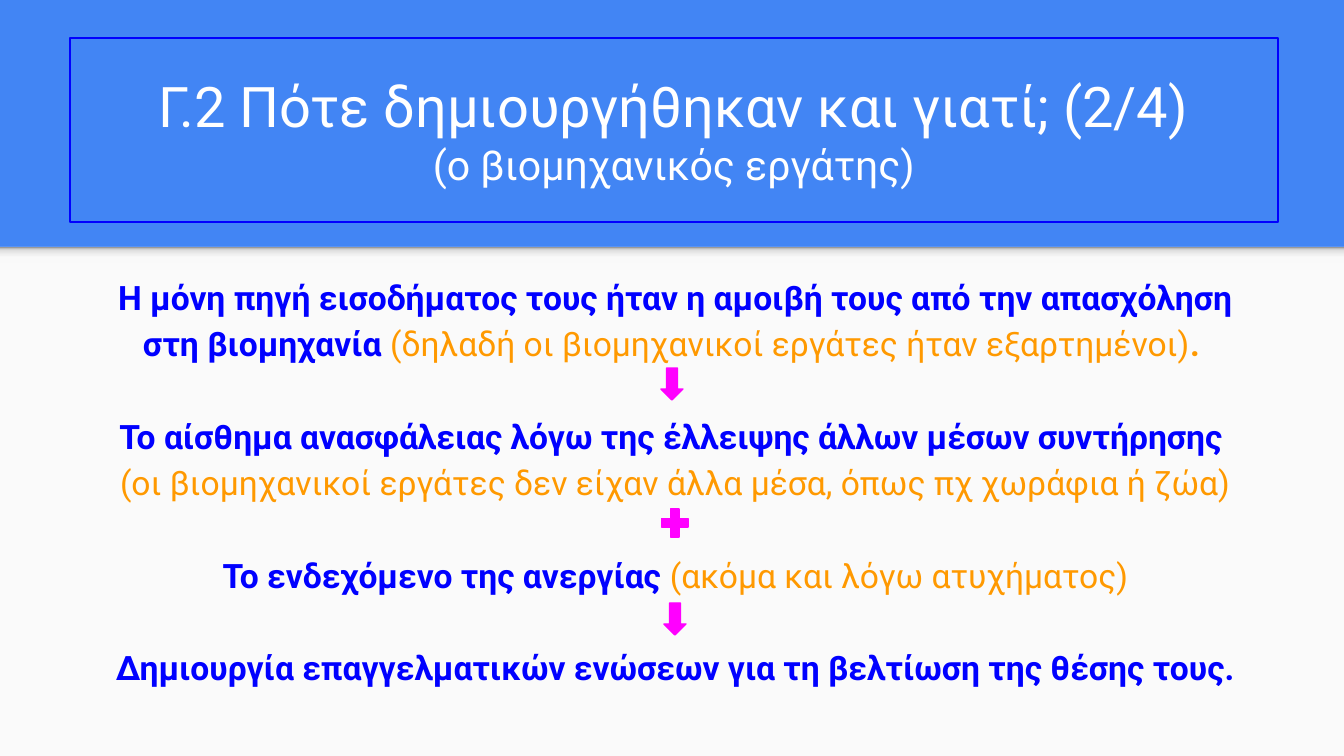
from lxml import etree
from pptx import Presentation
from pptx.dml.color import RGBColor
from pptx.enum.shapes import MSO_SHAPE as SHAPE
from pptx.enum.text import MSO_ANCHOR as ANCHOR, PP_ALIGN as ALIGN
from pptx.oxml.ns import qn
from pptx.util import Emu, Inches, Pt

COLORS = {"header": "4285F4", "panel": "FAFAFA", "title": "FFFFFF",
          "key": "0000FF", "note": "FF9900", "symbol": "FF00FF"}
FONT = "Roboto"
EMU_PER_PX = 914400 / 134.4
WIDTH, HEIGHT, HEADER_HEIGHT = 1344, 756, 247

TITLE_LINES = [("Γ.2 Πότε δημιουργήθηκαν και γιατί; (2/4)", 30),
               ("(ο βιομηχανικός εργάτης)", 22)]
# Each step holds paragraphs, each paragraph holds (text, colour, bold) runs.
STEPS = [
    [[("Η μόνη πηγή εισοδήματος τους ήταν η αμοιβή τους από την απασχόληση στη βιομηχανία ",
       "key", True),
      ("(δηλαδή οι βιομηχανικοί εργάτες ήταν εξαρτημένοι)", "note", False),
      (". ", "note", True)]],
    [[("Το αίσθημα ανασφάλειας λόγω της έλλειψης άλλων μέσων συντήρησης ", "key", True)],
     [("(οι βιομηχανικοί εργάτες δεν είχαν άλλα μέσα, όπως πχ χωράφια ή ζώα)",
       "note", False)]],
    [[("Το ενδεχόμενο της ανεργίας ", "key", True),
      ("(ακόμα και λόγω ατυχήματος)", "note", False)]],
    [[("Δημιουργία επαγγελματικών ενώσεων για τη βελτίωση της θέσης τους.", "key", True)]],
]
SYMBOLS = [(SHAPE.DOWN_ARROW, (661, 368, 22, 32), 0.5),
           (SHAPE.MATH_PLUS, (657, 504, 36, 38), 0.235),
           (SHAPE.DOWN_ARROW, (664, 603, 22, 32), 0.5)]
SHADE_STOPS = [(0, "F9F9F9"), (36, "F9F9F9"), (80, "DEDEDE"), (100, "999999")]


def px(length):
    return Emu(round(length * EMU_PER_PX))


def rgb(name):
    return RGBColor.from_string(COLORS[name])


def add_plain_shape(kind, box):
    """Add a preset shape without shadow or outline."""
    shape = slide.shapes.add_shape(kind, *map(px, box))
    shape.shadow.inherit = False
    shape.line.fill.background()
    return shape


def add_text_frame(box):
    textbox = slide.shapes.add_textbox(*map(px, box))
    frame = textbox.text_frame
    frame.word_wrap = True
    frame.margin_left = frame.margin_right = Inches(0.1)
    frame.margin_top = frame.margin_bottom = Inches(0.1)
    return textbox, frame


def add_paragraph(frame, index, size):
    """Return the first paragraph for index 0, a new one otherwise."""
    paragraph = frame.add_paragraph() if index else frame.paragraphs[0]
    paragraph.alignment = ALIGN.CENTER
    paragraph.font.name = FONT
    paragraph.font.size = Pt(size)
    return paragraph


def set_gradient(shape, stops):
    """Fill from bottom to top with (percent, hex) stops."""
    shape.fill.gradient()
    shape.fill.gradient_angle = 90
    stop_list = shape.element.spPr.find(".//" + qn("a:gsLst"))
    for old_stop in list(stop_list):
        stop_list.remove(old_stop)
    for percent, color in stops:
        stop = etree.SubElement(stop_list, qn("a:gs"), pos=str(percent * 1000))
        etree.SubElement(stop, qn("a:srgbClr"), val=color)


deck = Presentation()
deck.slide_width, deck.slide_height = px(WIDTH), px(HEIGHT)
slide = deck.slides.add_slide(deck.slide_layouts[6])
slide.background.fill.solid()
slide.background.fill.fore_color.rgb = rgb("header")

panel = add_plain_shape(SHAPE.RECTANGLE, (0, HEADER_HEIGHT, WIDTH, HEIGHT - HEADER_HEIGHT))
panel.fill.solid()
panel.fill.fore_color.rgb = rgb("panel")
header_shade = add_plain_shape(SHAPE.RECTANGLE, (0, HEADER_HEIGHT, WIDTH, 16))
set_gradient(header_shade, SHADE_STOPS)

title, title_frame = add_text_frame((70, 38, 1208, 184))
title.line.color.rgb = rgb("key")
title.line.width = Pt(0.75)
title_frame.vertical_anchor = ANCHOR.MIDDLE
for i, (text, size) in enumerate(TITLE_LINES):
    line = add_paragraph(title_frame, i, size)
    line.text = text
    line.font.color.rgb = rgb("title")

_, steps_frame = add_text_frame((74, 257, 1203, 449))
paragraphs = [(runs, i > 0 and j == 0)
              for i, step in enumerate(STEPS) for j, runs in enumerate(step)]
for i, (runs, follows_symbol) in enumerate(paragraphs):
    paragraph = add_paragraph(steps_frame, i, 18)
    paragraph.line_spacing = 1.15
    if follows_symbol:
        paragraph.space_before = Pt(24.8)
    for text, color, bold in runs:
        run = paragraph.add_run()
        run.text = text
        run.font.bold = bold
        run.font.color.rgb = rgb(color)

for kind, box, thickness in SYMBOLS:
    symbol = add_plain_shape(kind, box)
    symbol.adjustments[0] = thickness
    symbol.fill.solid()
    symbol.fill.fore_color.rgb = rgb("symbol")
    symbol.line.color.rgb = rgb("symbol")
    symbol.line.width = Pt(0.75)

deck.save("out.pptx")
